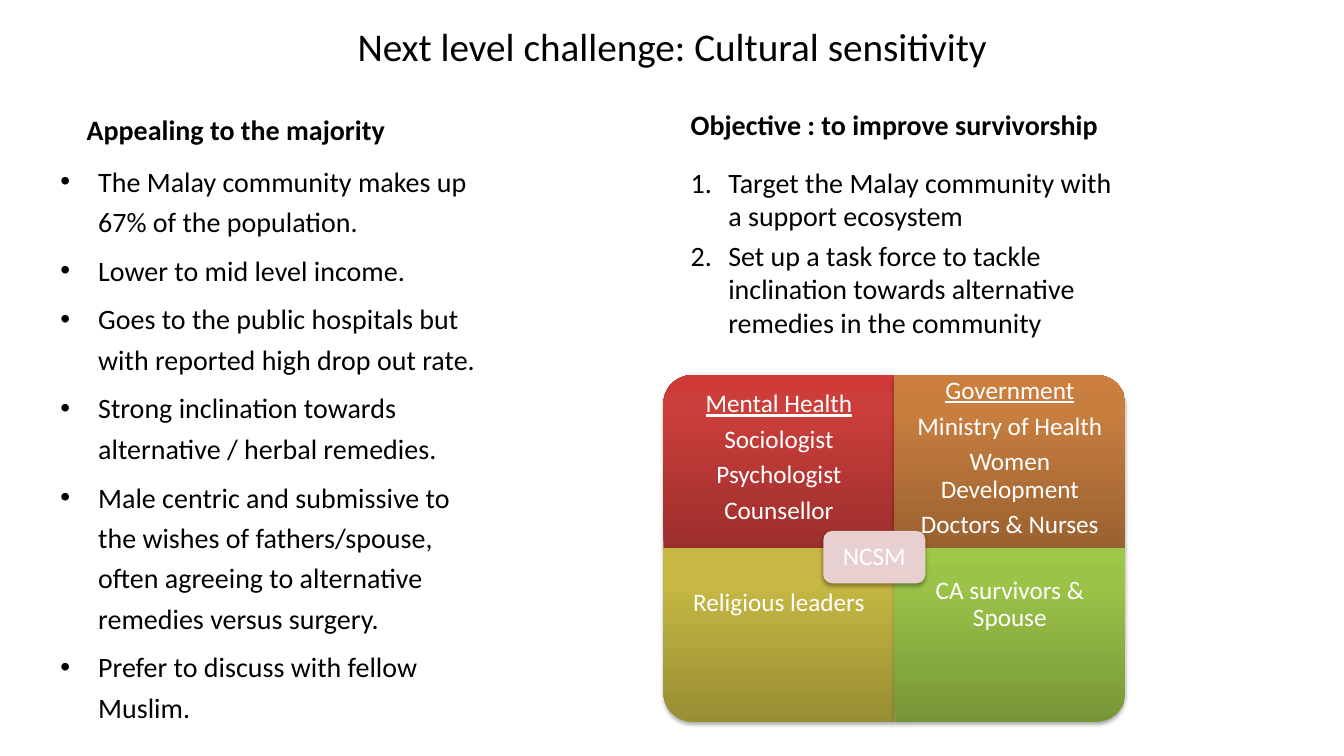
from lxml.etree import SubElement
from pptx import Presentation
from pptx.dml.color import RGBColor
from pptx.enum.shapes import MSO_SHAPE as SHAPE
from pptx.enum.text import MSO_ANCHOR as ANCHOR, MSO_AUTO_SIZE as AUTO, PP_ALIGN as ALIGN
from pptx.oxml.ns import qn
from pptx.util import Cm, Pt

FONT = "Calibri"
MAP_LEFT, MAP_TOP, CELL_W, CELL_H = 16.72, 9.45, 5.82, 4.37

CELLS = [
    (0, 0, 270, ("9C2F2D", "CB3E3A", "CE3B37"), 9.85,
     ["Mental Health", "Sociologist", "Psychologist", "Counsellor"]),
    (1, 0, 0, ("9A6130", "C87E3F", "CC7E3C"), 9.52,
     ["Government", "Ministry of Health", "Women Development", "Doctors & Nurses"]),
    (0, 1, 180, ("988E34", "C6B843", "C9BB41"), 14.86, ["Religious leaders"]),
    (1, 1, 90, ("779737", "9BC348", "9DC746"), 14.55, ["CA survivors & Spouse"]),
]
MAJORITY = [
    "The Malay community makes up 67% of the population.",
    "Lower to mid level income.",
    "Goes to the public hospitals but with reported high drop out rate.",
    "Strong inclination towards alternative / herbal remedies.",
    "Male centric and submissive to the wishes of fathers/spouse, often agreeing "
    "to alternative remedies versus surgery.",
    "Prefer to discuss with fellow Muslim.",
]
OBJECTIVES = [
    "Target the Malay community with a support ecosystem",
    "Set up a task force to tackle inclination towards alternative remedies in the community",
]


def rgb(value):
    return RGBColor.from_string(value)


def style(p, size, color, bold=False):
    for r in p.runs:
        r.font.name, r.font.size, r.font.bold = FONT, Pt(size), bold
        r.font.color.rgb = rgb(color)


def place(sp, x, y, w, h):
    sp.left, sp.top, sp.width, sp.height = Cm(x), Cm(y), Cm(w), Cm(h)


def add_heading(sp, text, box, anchor, size, bold):
    place(sp, *box)
    tf = sp.text_frame
    tf.text = text
    tf.auto_size, tf.vertical_anchor = AUTO.NONE, anchor
    style(tf.paragraphs[0], size, "000000", bold)


def add_list(sp, items, box, marker, spacing, before):
    place(sp, *box)
    tf = sp.text_frame
    tf.text = "\n".join(items)
    tf.auto_size = AUTO.NONE
    for i, p in enumerate(tf.paragraphs):
        pPr = p._p.get_or_add_pPr()
        pPr.set("marL", str(Cm(0.95)))
        pPr.set("indent", str(-Cm(0.95)))
        SubElement(pPr, qn("a:buFont"), typeface="Arial" if "buChar" in marker else FONT)
        SubElement(pPr, qn("a:" + marker[0]), **marker[1])
        p.line_spacing = spacing
        p.space_before = Pt(before if i else 0)
        style(p, 20, "000000")


def add_shadow(sp):
    sp.shadow.inherit = False
    effects = sp._element.spPr.find(qn("a:effectLst"))
    shadow = SubElement(effects, qn("a:outerShdw"), blurRad="40000", dist="23000",
                        dir="5400000", rotWithShape="0")
    color = SubElement(shadow, qn("a:srgbClr"), val="000000")
    SubElement(color, qn("a:alpha"), val="35000")


def fill_gradient(sp, colors):
    sp.fill.gradient()
    grad = sp._element.spPr.find(qn("a:gradFill"))
    for child in list(grad):
        grad.remove(child)
    grad.set("rotWithShape", "0")
    stops = SubElement(grad, qn("a:gsLst"))
    for pos, color in zip((0, 80, 100), colors):
        stop = SubElement(stops, qn("a:gs"), pos=str(pos * 1000))
        SubElement(stop, qn("a:srgbClr"), val=color)
    SubElement(grad, qn("a:lin"), ang="16200000", scaled="0")


def set_labels(tf, lines, side, top=0):
    tf.word_wrap = True
    tf.margin_left = tf.margin_right = Cm(side)
    tf.margin_top = tf.margin_bottom = Cm(top)
    tf.text = "\n".join(lines)
    for p in tf.paragraphs:
        p.alignment, p.line_spacing, p.space_after = ALIGN.CENTER, 0.9, Pt(6)
        style(p, 18, "FFFFFF")


def add_cell(slide, col, row, turn, colors):
    x, y = MAP_LEFT + col * CELL_W, MAP_TOP + row * CELL_H
    w, h = (CELL_H, CELL_W) if turn % 180 else (CELL_W, CELL_H)
    sp = slide.shapes.add_shape(SHAPE.ROUND_1_RECTANGLE, Cm(x + (CELL_W - w) / 2),
                                Cm(y + (CELL_H - h) / 2), Cm(w), Cm(h))
    sp.rotation = turn
    fill_gradient(sp, colors)
    sp.line.fill.background()
    add_shadow(sp)


def add_cell_text(slide, col, top, lines):
    height = 3.6 if len(lines) > 1 else 1.6
    sp = slide.shapes.add_textbox(Cm(MAP_LEFT + col * CELL_W), Cm(top), Cm(CELL_W), Cm(height))
    set_labels(sp.text_frame, lines, 0.36)
    if len(lines) > 1:
        sp.text_frame.paragraphs[0].runs[0].font.underline = True


def add_hub(slide, text):
    sp = slide.shapes.add_shape(SHAPE.ROUNDED_RECTANGLE, Cm(20.75), Cm(13.38), Cm(2.57), Cm(1.32))
    sp.fill.solid()
    sp.fill.fore_color.rgb = rgb("E8D0D0")
    sp.line.fill.background()
    add_shadow(sp)
    set_labels(sp.text_frame, [text], 0.18, 0.18)
    sp.text_frame.vertical_anchor = ANCHOR.MIDDLE


def main():
    prs = Presentation()
    prs.slide_width, prs.slide_height = Cm(33.87), Cm(19.05)
    s = prs.slides.add_slide(prs.slide_layouts[4])
    title, left_head, left_list, right_head, right_list = s.placeholders

    add_heading(title, "Next level challenge: Cultural sensitivity",
                (1.7, 0.43, 30.48, 1.5), ANCHOR.TOP, 28, False)
    title.text_frame.paragraphs[0].alignment = ALIGN.CENTER
    add_heading(left_head, "Appealing to the majority",
                (1.93, 2.03, 11.23, 1.78), ANCHOR.BOTTOM, 20, True)
    add_heading(right_head, "Objective : to improve survivorship",
                (17.15, 1.9, 11.23, 1.78), ANCHOR.BOTTOM, 20, True)
    add_list(left_list, MAJORITY, (1.27, 3.84, 11.23, 14.8), ("buChar", {"char": "•"}), 1.2, 6)
    add_list(right_list, OBJECTIVES, (17.15, 4.04, 11.23, 5),
             ("buAutoNum", {"type": "arabicPeriod"}), 1.0, 4)

    for col, row, turn, colors, top, lines in CELLS:
        add_cell(s, col, row, turn, colors)
        add_cell_text(s, col, top, lines)
    add_hub(s, "NCSM")
    prs.save("out.pptx")


if __name__ == "__main__":
    main()
